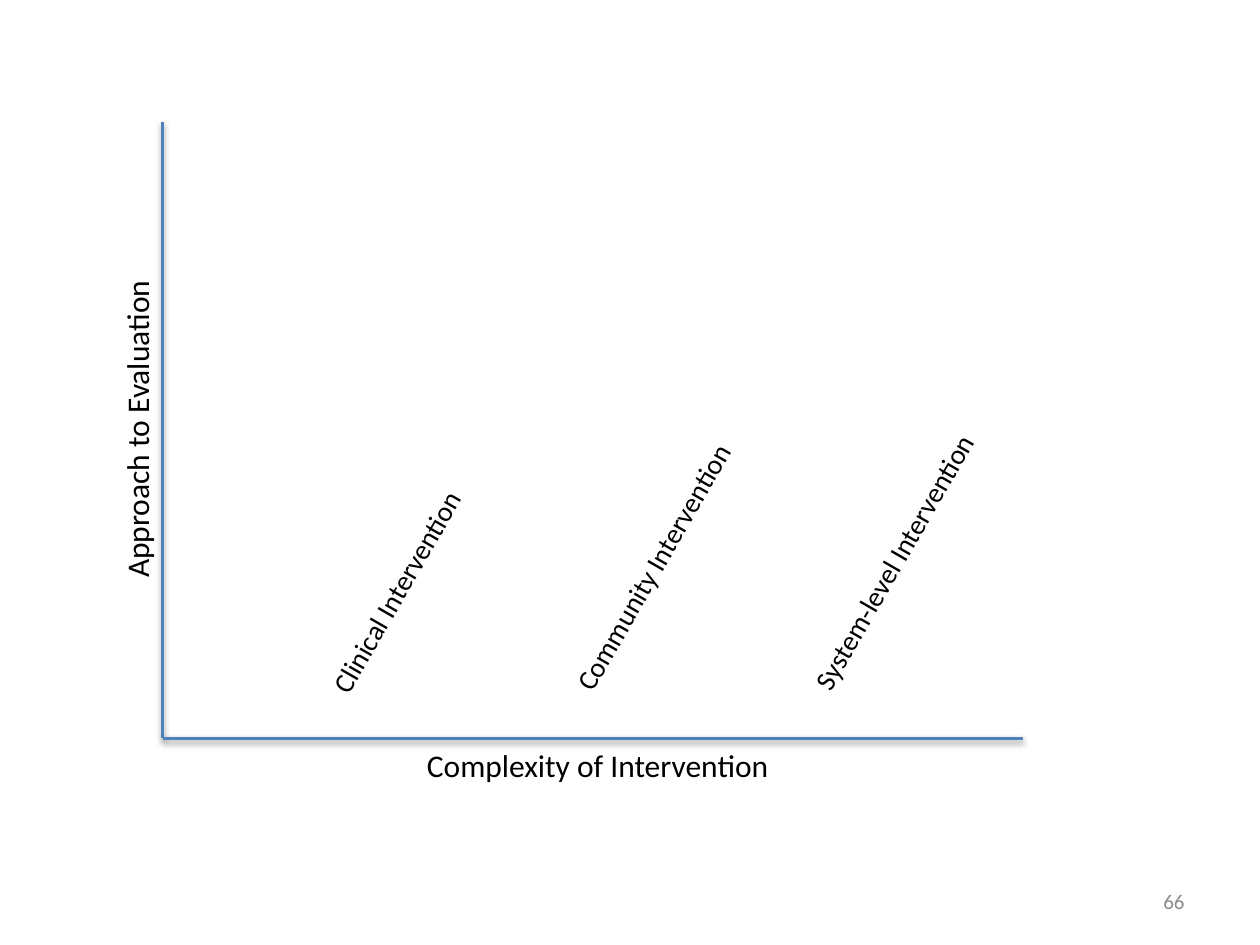
"""Build a slide with two labelled axes and three kinds of intervention."""
from dataclasses import dataclass

import pptx
import pptx.dml.color
import pptx.enum.shapes
import pptx.enum.text
import pptx.util

BLUE = pptx.dml.color.RGBColor(0x4F, 0x81, 0xBD)
BLACK = pptx.dml.color.RGBColor(0, 0, 0)
GRAY = pptx.dml.color.RGBColor(0x8C, 0x8C, 0x8C)
COLS, ROWS = 100, 75
CELL = pptx.util.Inches(0.1)
LEFT, RIGHT, TOP, BASE = 12.9, 81.2, 9.7, 58.6
ALIGN = pptx.enum.text.PP_ALIGN
ANCHOR = pptx.enum.text.MSO_ANCHOR


@dataclass(frozen=True)
class Axis:
    """A line between two grid points."""
    start: tuple[float, float]
    end: tuple[float, float]


@dataclass(frozen=True)
class Label:
    """A line of text in a box placed by its centre on the grid."""
    text: str
    mid: tuple[float, float]
    size: tuple[float, float]
    points: int = 18
    turn: int = 0
    color: pptx.dml.color.RGBColor = BLACK
    align: ALIGN = ALIGN.LEFT
    anchor: ANCHOR = ANCHOR.TOP
    fit: bool = True


AXES = (
    Axis((LEFT, TOP), (LEFT, BASE)),
    Axis((RIGHT, BASE), (LEFT, BASE)),
)
KINDS = (
    ("Clinical Intervention", (31.5, 46.85), 20.2),
    ("Community Intervention", (51.9, 44.85), 24.4),
    ("System-level Intervention", (71, 44.45), 25.2),
)
LABELS = (
    Label("Complexity of Intervention", (47.6, 60.7), (29.4, 4)),
    Label("Approach to Evaluation", (10.85, 33.9), (25.9, 4), turn=270),
    *(Label(text, mid, (wide, 3.7), 16, 300) for text, mid, wide in KINDS),
    Label("66", (83.35, 71.5), (23.3, 4), 12, 0, GRAY,
          ALIGN.RIGHT, ANCHOR.MIDDLE, False),
)


def cells(count: float) -> int:
    """Return the length of a number of grid cells."""
    return round(count * CELL)


def draw_axis(slide: pptx.slide.Slide, axis: Axis) -> None:
    """Draw an axis with the soft shadow of the theme."""
    ends = [cells(count) for count in axis.start + axis.end]
    kind = pptx.enum.shapes.MSO_CONNECTOR.STRAIGHT
    line = slide.shapes.add_connector(kind, *ends).line
    line.color.rgb = BLUE
    line.width = pptx.util.Pt(2)


def draw_label(slide: pptx.slide.Slide, label: Label) -> None:
    """Draw a label, turned about its centre."""
    (x, y), (wide, high) = label.mid, label.size
    spots = (x - wide / 2, y - high / 2, wide, high)
    box = slide.shapes.add_textbox(*map(cells, spots))
    box.rotation = label.turn
    frame = box.text_frame
    sizing = pptx.enum.text.MSO_AUTO_SIZE
    frame.auto_size = sizing.SHAPE_TO_FIT_TEXT if label.fit else sizing.NONE
    frame.word_wrap = not label.fit
    frame.vertical_anchor = label.anchor
    frame.text = label.text
    para = frame.paragraphs[0]
    para.alignment = label.align
    para.font.name = "Calibri"
    para.font.size = pptx.util.Pt(label.points)
    para.font.color.rgb = label.color


def main() -> None:
    """Build and save the slide."""
    deck = pptx.Presentation()
    deck.slide_width, deck.slide_height = cells(COLS), cells(ROWS)
    slide = deck.slides.add_slide(deck.slide_layouts[6])
    for axis in AXES:
        draw_axis(slide, axis)
    for label in LABELS:
        draw_label(slide, label)
    deck.save("out.pptx")


if __name__ == "__main__":
    main()
